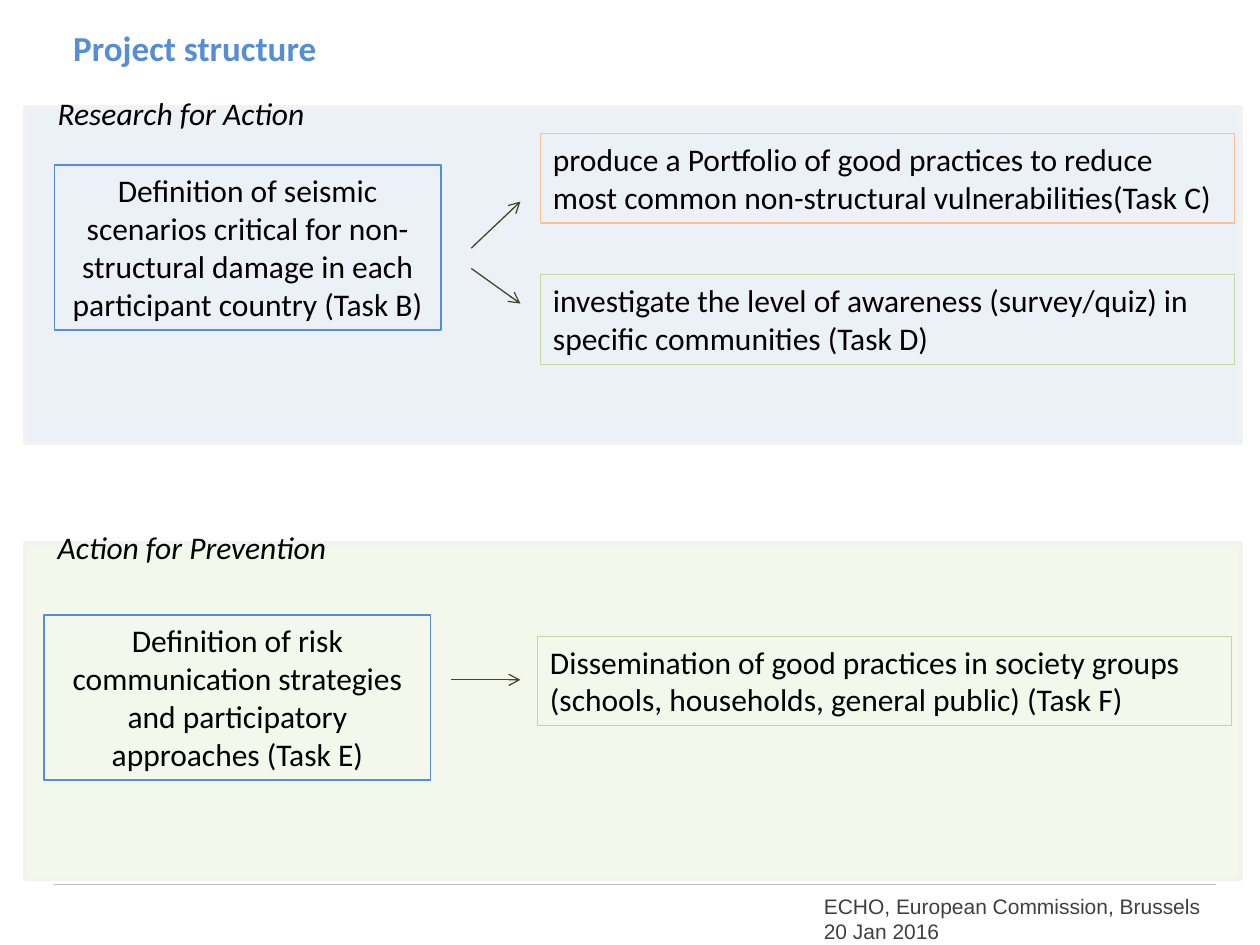
from pptx import Presentation
from pptx.dml.color import RGBColor as Rgb
from pptx.enum.shapes import MSO_CONNECTOR as Conn, MSO_SHAPE as Shape
from pptx.enum.text import MSO_ANCHOR as Anchor, MSO_AUTO_SIZE as Auto, PP_ALIGN as Align
from pptx.oxml.ns import qn
from pptx.util import Pt
from lxml.etree import SubElement as Sub

HUES = {
    "title": "558ED5", "text": "000000", "foot": "404040", "rule": "BFBFBF",
    "edge": "F2F2F2", "blue": "4F81BD", "green": "9BBB59", "arrow": "4A452A",
    "lead": "558ED5", "orange": "FAC090", "lime": "C3D69B",
}
THIN = 0.75


def hue(name):
    return Rgb.from_string(HUES[name])


class Page:
    """The current slide and its text style."""

    def __init__(self, deck):
        self.slide = deck.slides.add_slide(deck.slide_layouts[5])
        self.shapes = self.slide.shapes
        self.face = "Calibri"
        self.size = 18

    def letter(self, shape, text, size=None, face=None, color="text",
               bold=False, italic=False, align=Align.LEFT, wrap=True):
        """Fill a shape with styled text."""
        frame = shape.text_frame
        frame.text = text
        frame.word_wrap = wrap
        frame.auto_size = Auto.NONE
        frame.vertical_anchor = Anchor.TOP
        for para in frame.paragraphs:
            para.alignment = align
            for run in para.runs:
                font = run.font
                font.name = face or self.face
                font.size = Pt(size or self.size)
                font.bold, font.italic = bold, italic
                font.color.rgb = hue(color)

    def title(self, text, x, y, w, h):
        shape = self.shapes.title
        shape.left, shape.top, shape.width, shape.height = map(Pt, (x, y, w, h))
        self.letter(shape, text, size=20, color="title", bold=True, wrap=False)

    def label(self, text, x, y, w, h, **style):
        self.letter(self.shapes.add_textbox(*map(Pt, (x, y, w, h))), text, **style)

    def rect(self, x, y, w, h, edge, width):
        shape = self.shapes.add_shape(Shape.RECTANGLE, *map(Pt, (x, y, w, h)))
        shape.shadow.inherit = False
        shape.fill.background()
        shape.line.color.rgb = hue(edge)
        shape.line.width = Pt(width)
        return shape

    def panel(self, x, y, w, h, tint):
        """Draw a pale section background, 11 % opaque."""
        shape = self.rect(x, y, w, h, "edge", 2)
        shape.fill.solid()
        shape.fill.fore_color.rgb = hue(tint)
        color = shape._element.spPr.find(qn("a:solidFill"))[0]
        Sub(color, qn("a:alpha")).set("val", "11000")

    def box(self, text, x, y, w, h, edge, align=Align.LEFT):
        self.letter(self.rect(x, y, w, h, edge, THIN), text, align=align)

    def line(self, x1, y1, x2, y2, color, head=False):
        line = self.shapes.add_connector(Conn.STRAIGHT, *map(Pt, (x1, y1, x2, y2)))
        line.line.color.rgb = hue(color)
        line.line.width = Pt(THIN)
        props = line._element.spPr
        if head:
            Sub(props.find(qn("a:ln")), qn("a:tailEnd")).set("type", "arrow")
        Sub(props, qn("a:effectLst"))


def main():
    deck = Presentation()
    deck.slide_width, deck.slide_height = Pt(720), Pt(540)
    page = Page(deck)

    page.line(31, 505.4, 694.8, 505.4, "rule")
    page.label("ECHO, European Commission, Brussels\n20 Jan 2016",
               463.7, 506.9, 282, 36, size=12, face="Arial", color="foot")
    for y, tint in ((61.2, "blue"), (310.3, "green")):
        page.panel(14.4, y, 694.8, 192.2, tint)
    page.title("Project structure", 34.6, 11.5, 154.8, 31.7)

    leads = (
        ("Definition of seismic scenarios critical for non-structural damage "
         "in each participant country (Task B)", 31, 94.3),
        ("Definition of risk communication strategies and participatory "
         "approaches (Task E)", 25.2, 351.4),
    )
    for text, x, y in leads:
        page.box(text, x, y, 221, 94.3, "lead", Align.CENTER)

    tasks = (
        ("produce a Portfolio of good practices to reduce most common "
         "non-structural vulnerabilities(Task C)", 308.9, 76.3, "orange"),
        ("investigate the level of awareness (survey/quiz) in specific "
         "communities (Task D)", 308.9, 157, "lime"),
        ("Dissemination of good practices in society groups (schools, "
         "households, general public) (Task F)", 307.2, 363.6, "lime"),
    )
    for text, x, y, edge in tasks:
        page.box(text, x, y, 396.7, 51.1, edge)

    for x, start, end in ((269.3, 141.8, 115.2), (269.3, 153.4, 173.5),
                          (257.8, 388.5, 388.5)):
        page.line(x, start, 297.4, end, "arrow", head=True)

    for text, y, w in (("Research for Action", 50.4, 158.4),
                       ("Action for Prevention", 298.1, 169.9)):
        page.label(text, 25.9, y, w, 28.8, italic=True, wrap=False)

    deck.save("out.pptx")


if __name__ == "__main__":
    main()
